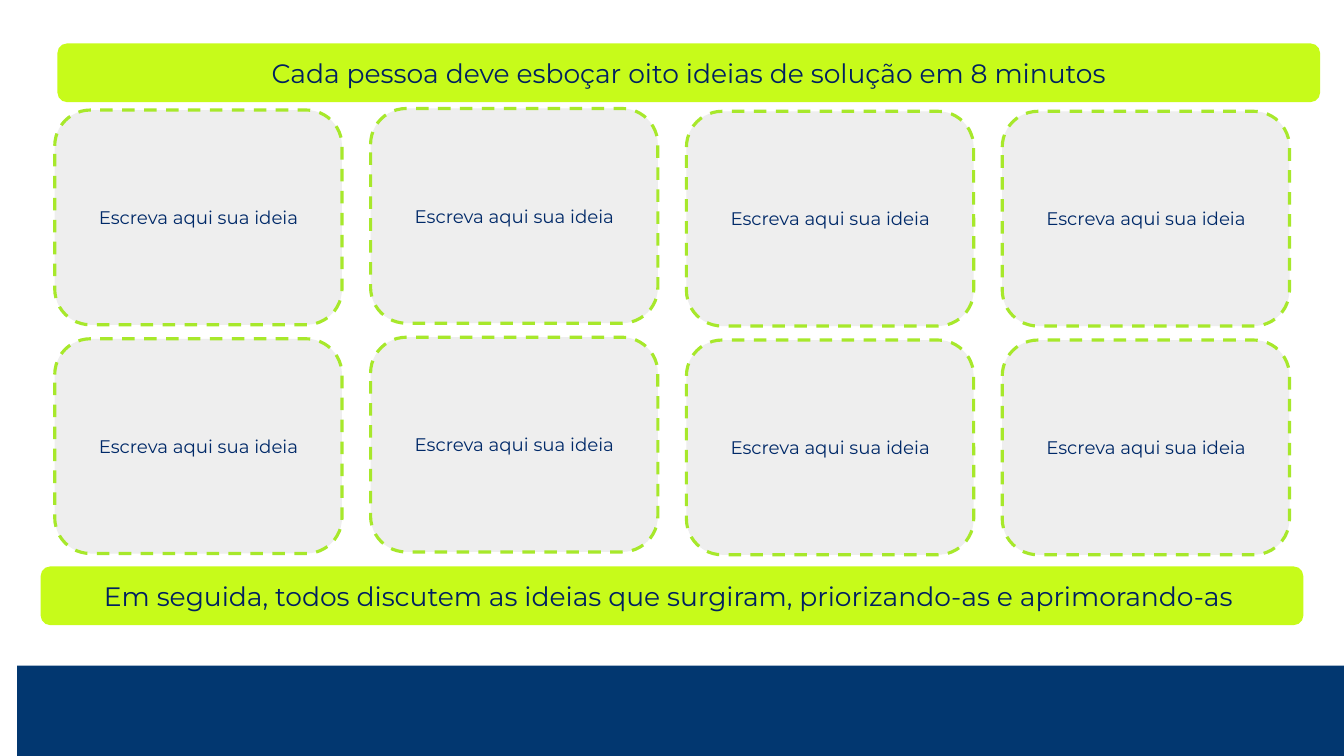
import pptx
import pptx.util
import pptx.dml.color
import pptx.enum.dml
import pptx.enum.shapes
import pptx.enum.text

Pt = pptx.util.Pt
SHAPES = pptx.enum.shapes.MSO_SHAPE

THEME = {
    "font": "Montserrat",
    "lime": "C7FB1A",
    "navy": "023770",
    "card": "EEEEEE",
    "dash": "A7E82B",
    "banner_text": "002060",
    "card_text": "002968",
    "banner_size": 19,
    "card_size": 13,
    "dash_width": 2.25,
}

BANNERS = [
    ("Em seguida, todos discutem as ideias que surgiram, priorizando-as e aprimorando-as ", 29, 404.6),
    ("Cada pessoa deve esboçar oito ideias de solução em 8 minutos", 41, 31),
]
BANNER_SIZE = (902, 42)
FOOTER_BOX = (12.2, 475.4, 960, 76.3)

PROMPT = "Escreva aqui sua ideia"
COLUMN_TOPS = [78.6, 77.5, 79.5, 79.5]
ROWS = 2
CARD_LEFT = 39.1
CARD_SIZE = (205.2, 153.4)
COLUMN_PITCH = 225.6
ROW_PITCH = 163.4


def color(name):
    return pptx.dml.color.RGBColor.from_string(THEME[name])


def add_block(slide, kind, box, fill):
    block = slide.shapes.add_shape(kind, *map(Pt, box))
    block.shadow.inherit = False
    block.fill.solid()
    block.fill.fore_color.rgb = color(fill)
    block.line.fill.background()
    return block


def write(block, text, style, inset):
    frame = block.text_frame
    frame_format = {
        "word_wrap": True,
        "vertical_anchor": pptx.enum.text.MSO_ANCHOR.MIDDLE,
        "margin_left": Pt(7.2),
        "margin_right": Pt(7.2),
        "margin_top": Pt(inset),
        "margin_bottom": Pt(inset),
    }
    for name, value in frame_format.items():
        setattr(frame, name, value)
    paragraph = frame.paragraphs[0]
    paragraph.alignment = pptx.enum.text.PP_ALIGN.CENTER
    run = paragraph.add_run()
    run.text = text
    font_format = {"name": THEME["font"], "size": Pt(THEME[style + "_size"])}
    for name, value in font_format.items():
        setattr(run.font, name, value)
    run.font.color.rgb = color(style + "_text")


def add_banner(slide, text, left, top):
    banner = add_block(slide, SHAPES.ROUNDED_RECTANGLE, (left, top, *BANNER_SIZE), "lime")
    write(banner, text, "banner", 3.6)


def add_card(slide, left, top):
    card = add_block(slide, SHAPES.ROUNDED_RECTANGLE, (left, top, *CARD_SIZE), "card")
    card.line.color.rgb = color("dash")
    line_format = {
        "width": Pt(THEME["dash_width"]),
        "dash_style": pptx.enum.dml.MSO_LINE.DASH,
    }
    for name, value in line_format.items():
        setattr(card.line, name, value)
    write(card, PROMPT, "card", 7.2)


def main():
    deck = pptx.Presentation()
    deck.slide_width, deck.slide_height = Pt(960), Pt(540)
    slide = deck.slides.add_slide(deck.slide_layouts[6])

    add_block(slide, SHAPES.RECTANGLE, FOOTER_BOX, "navy")
    for text, left, top in BANNERS:
        add_banner(slide, text, left, top)
    for column, top in enumerate(COLUMN_TOPS):
        for row in range(ROWS):
            add_card(slide, CARD_LEFT + column * COLUMN_PITCH, top + row * ROW_PITCH)

    deck.save("out.pptx")


if __name__ == "__main__":
    main()
